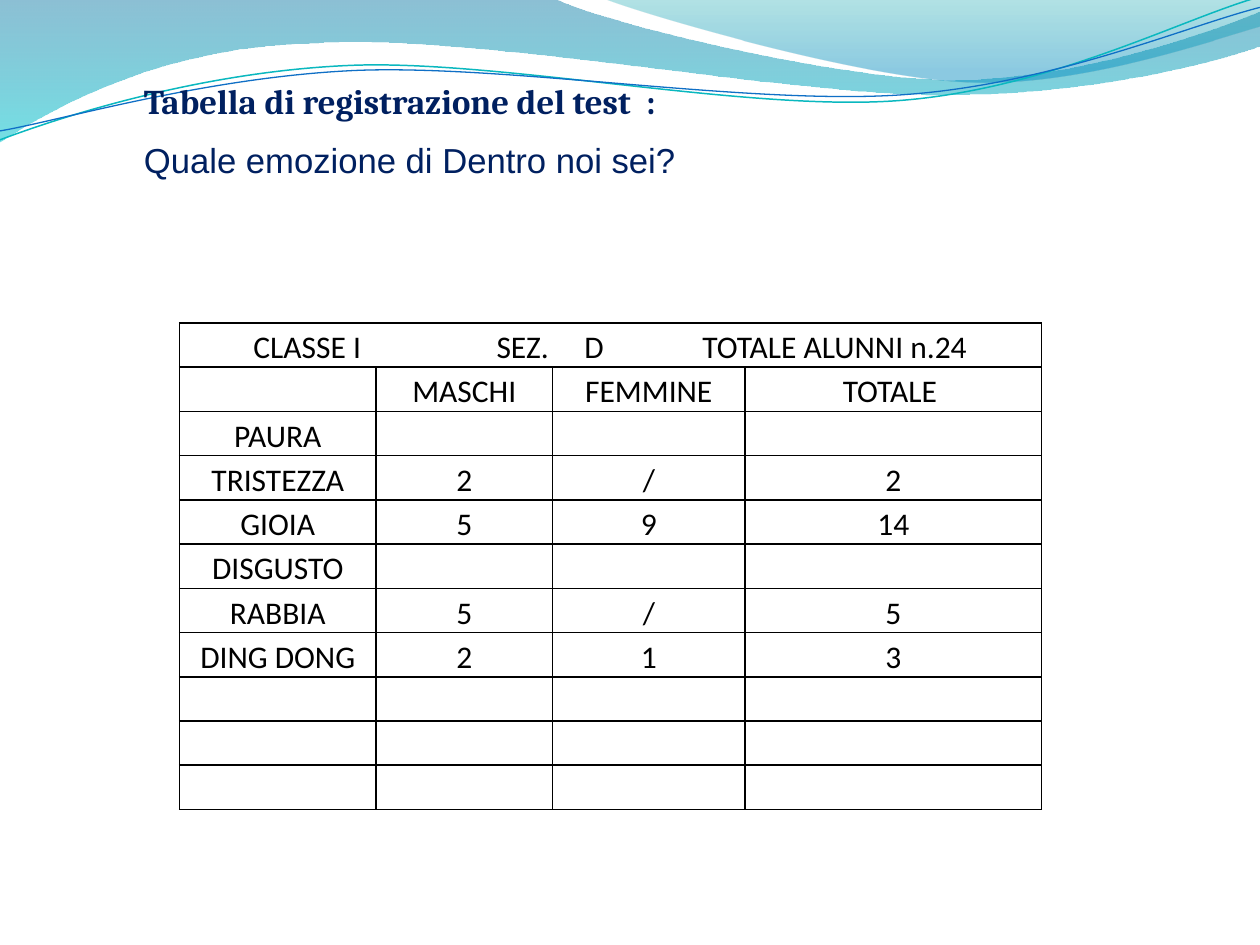
from dataclasses import dataclass

from lxml import etree
from pptx import Presentation
from pptx.dml.color import RGBColor
from pptx.enum.text import MSO_ANCHOR, MSO_AUTO_SIZE, PP_ALIGN
from pptx.oxml.ns import qn
from pptx.slide import Slide
from pptx.util import Cm, Pt

LEFT, CENTER = PP_ALIGN.LEFT, PP_ALIGN.CENTER
BOTTOM, NO_FIT = MSO_ANCHOR.BOTTOM, MSO_AUTO_SIZE.NONE

BLACK = RGBColor(0x00, 0x00, 0x00)
NAVY = RGBColor(0x00, 0x20, 0x60)
DEEP_BLUE = RGBColor(0x00, 0x74, 0xA1)
AQUA = RGBColor(0x00, 0xC6, 0xCF)
TEAL = RGBColor(0x00, 0xA1, 0xA9)
SKY = RGBColor(0x00, 0x8B, 0xBF)
TURQUOISE = RGBColor(0x0A, 0xB8, 0xBF)
BLUE = RGBColor(0x0F, 0x6F, 0xC6)

BROAD_WAVE = [
    [(0, 0)], [(11.18, -0.03)],
    [(12.09, 0.43), (16.87, 1.6), (19.25, 1.6)],
    [(21.67, 1.6), (24.33, 0.66), (25.4, 0.23)],
    [(25.43, 0.91)],
    [(24.97, 1.12), (22.1, 1.93), (18.95, 1.91)],
    [(15.8, 1.91), (9.7, 0.71), (6.53, 0.86)],
    [(3.28, 0.91), (1.17, 2.11), (-0.03, 2.87)],
]
CORNER_WAVE = [
    [(12.17, -0.03)],
    [(12.93, 0.28), (17.32, 1.57), (19.53, 1.65)],
    [(21.74, 1.75), (24.41, 0.81), (25.4, 0.53)],
    [(25.4, 0)],
]
UPPER_THREAD = [
    [(0, 2.82)],
    [(1.22, 2.36), (4.01, 1.45), (7.04, 1.32)],
    [(10.03, 1.19), (15.06, 2.26), (18.11, 2.03)],
    [(21.16, 1.8), (23.83, 0.38), (25.35, -0.05)],
]
LOWER_THREAD = [
    [(0, 2.64)],
    [(1.19, 2.44), (4.17, 1.55), (7.19, 1.42)],
    [(10.24, 1.3), (15.16, 2.13), (18.21, 1.91)],
    [(21.23, 1.7), (23.9, 0.53), (25.4, 0.15)],
]

COLUMN_WIDTHS = [3.96, 3.56, 3.88, 5.98]
ROW_HEIGHT = 0.89
CLASS_LINE = "CLASSE I\tSEZ.\tD\tTOTALE ALUNNI n.24"
CLASS_TABS = [4.9, 6.67, 9.05]
ROWS = [
    [CLASS_LINE, "", "", ""],
    ["", "MASCHI", "FEMMINE", "TOTALE "],
    ["PAURA", "", "", ""],
    ["TRISTEZZA", "2", "/", "2"],
    ["GIOIA", "5", "9", "14"],
    ["DISGUSTO", "", "", ""],
    ["RABBIA", "5", "/", "5"],
    ["DING DONG", "2", "1", "3"],
] + [[""] * 4] * 3


def write(para, text, *, font, size, color, bold=False, align=LEFT, spacing=1.0):
    """Add a formatted span to a paragraph."""
    para.alignment = align
    para.line_spacing = spacing
    para.space_before = Pt(0)
    span = para.add_run()
    span.text = text
    span.font.name = font
    span.font.size = Pt(size)
    span.font.bold = bold
    span.font.color.rgb = color


@dataclass
class Page:
    """Hold the style and the current slide."""

    slide: Slide
    table_font: str = "Calibri"
    table_size: float = 18
    title_size: float = 19.8
    border_width: float = 1

    def outline(self, path, closed):
        """Draw an outline of lines and cubic curves without shadow."""
        start, *points = [(Cm(x), Cm(y)) for segment in path for x, y in segment]
        builder = self.slide.shapes.build_freeform(*start)
        builder.add_line_segments(points, close=closed)
        shape = builder.convert_to_shape()
        shape.shadow.inherit = False
        lines = iter(list(shape.element.iter(qn("a:lnTo"))))
        for segment in path[1:]:
            first, *others = [next(lines) for _ in segment]
            if others:
                first.tag = qn("a:cubicBezTo")
                for line in others:
                    first.append(line[0])
                    line.getparent().remove(line)
        return shape

    def wave(self, path, stops):
        """Draw a translucent wave shaded from top to bottom."""
        shape = self.outline(path, True)
        shape.line.fill.background()
        shape.fill.gradient()
        shape.fill.gradient_angle = 270
        for stop, (position, color, _) in zip(shape.fill.gradient_stops, stops):
            stop.position = position
            stop.color.rgb = color
        tints = shape.element.spPr.iter(qn("a:srgbClr"))
        for tint, (_, _, opacity) in zip(tints, stops):
            etree.SubElement(tint, qn("a:alpha"), val=str(opacity * 1000))

    def thread(self, path, color, width):
        """Draw a thin curved line."""
        shape = self.outline(path, False)
        shape.fill.background()
        shape.line.color.rgb = color
        shape.line.width = Pt(width)

    def title(self, lines):
        """Fill the title placeholder and bring it in front of the waves."""
        box = self.slide.shapes.title
        box.left, box.top, box.width, box.height = Cm(2.9), Cm(1.32), Cm(19.51), Cm(4.7)
        box.element.getparent().append(box.element)
        frame = box.text_frame
        frame.word_wrap = True
        frame.auto_size = NO_FIT
        frame.vertical_anchor = BOTTOM
        frame.margin_left = frame.margin_right = frame.margin_top = 0
        frame.margin_bottom = Cm(2.38)
        para = frame.paragraphs[0]
        for index, (text, font, bold) in enumerate(lines):
            if index:
                para.add_line_break()
            write(para, text, font=font, size=self.title_size, color=NAVY,
                  bold=bold, spacing=Pt(33.8))

    def border(self, cell):
        """Rule all four sides of a cell."""
        properties = cell._tc.get_or_add_tcPr()
        for side in ("lnL", "lnR", "lnT", "lnB"):
            line = etree.SubElement(properties, qn(f"a:{side}"), w=str(Pt(self.border_width)))
            fill = etree.SubElement(line, qn("a:solidFill"))
            etree.SubElement(fill, qn("a:srgbClr"), val=str(BLACK))

    def table(self, rows, left, top):
        """Add the ruled table whose first row spans all columns."""
        frame = self.slide.shapes.add_table(
            len(rows), len(COLUMN_WIDTHS), Cm(left), Cm(top),
            Cm(sum(COLUMN_WIDTHS)), Cm(ROW_HEIGHT * len(rows)))
        table = frame.table
        table.first_row = table.horz_banding = False
        for column, width in zip(table.columns, COLUMN_WIDTHS):
            column.width = Cm(width)
        for row, texts in zip(table.rows, rows):
            row.height = Cm(ROW_HEIGHT)
            for cell, text in zip(row.cells, texts):
                cell.margin_left = cell.margin_right = Cm(0.18)
                cell.margin_top = cell.margin_bottom = 0
                self.border(cell)
                cell.fill.background()
                if text:
                    write(cell.text_frame.paragraphs[0], text, font=self.table_font,
                          size=self.table_size, color=BLACK, align=CENTER, spacing=1.15)
        heading = table.cell(0, 0)
        heading.merge(table.cell(0, len(COLUMN_WIDTHS) - 1))
        heading.margin_left = Cm(1.49)
        para = heading.text_frame.paragraphs[0]
        para.alignment = LEFT
        tabs = etree.SubElement(para._p.get_or_add_pPr(), qn("a:tabLst"))
        for position in CLASS_TABS:
            etree.SubElement(tabs, qn("a:tab"), pos=str(Cm(position)), algn="l")


def main():
    """Build the slide and save the deck."""
    deck = Presentation()
    deck.slide_width, deck.slide_height = Cm(25.4), Cm(19.05)
    page = Page(deck.slides.add_slide(deck.slide_layouts[5]))
    page.wave(BROAD_WAVE, [(0, DEEP_BLUE, 45), (1, AQUA, 55)])
    page.wave(CORNER_WAVE, [(0, TEAL, 30), (0.8, SKY, 45)])
    page.thread(UPPER_THREAD, TURQUOISE, 0.85)
    page.thread(LOWER_THREAD, BLUE, 0.75)
    page.title([
        ("Tabella di registrazione del test  :", "Cambria", True),
        ("Quale emozione di Dentro noi sei?", "Arial", False),
    ])
    page.table(ROWS, 3.62, 6.51)
    deck.save("out.pptx")


if __name__ == "__main__":
    main()
